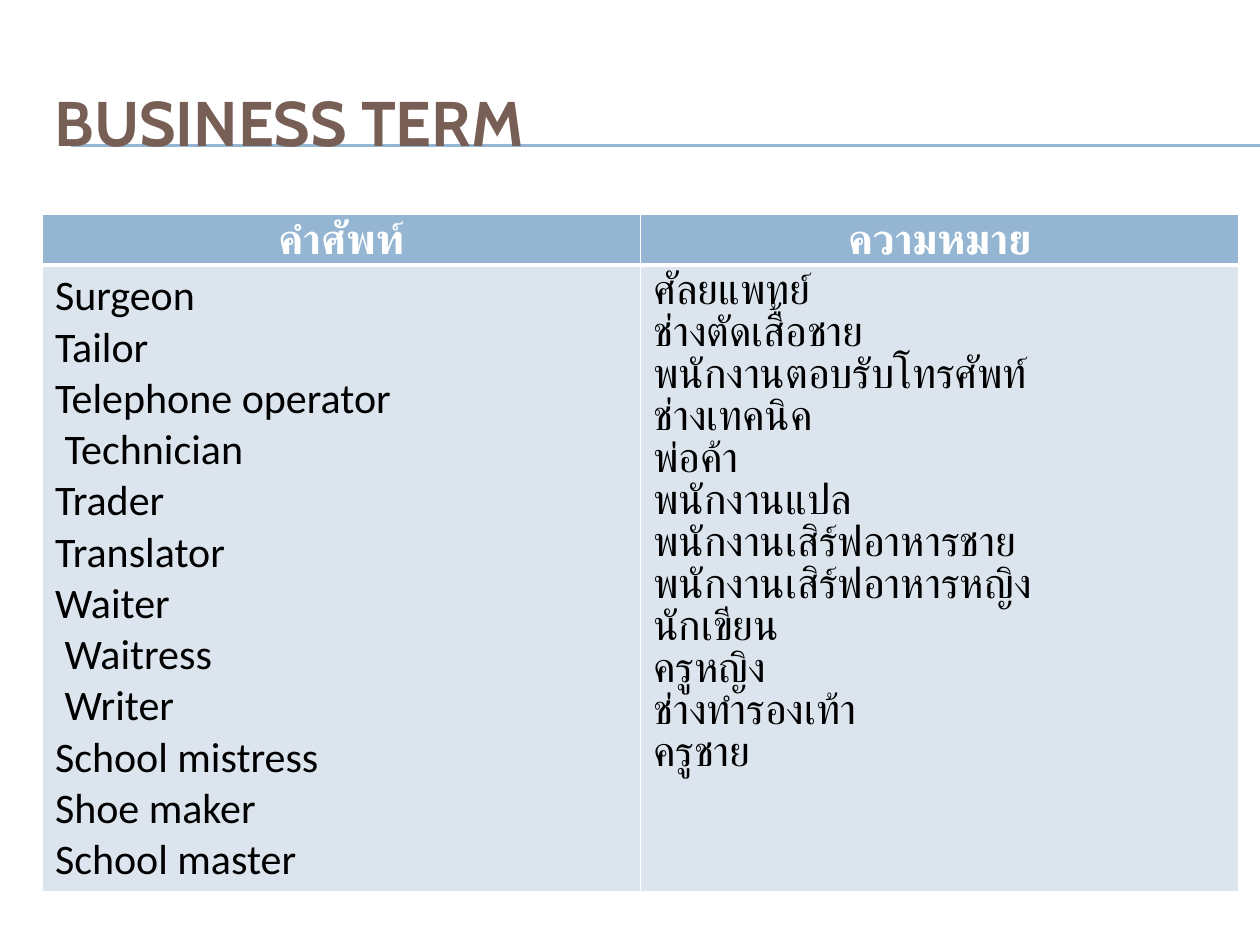
from dataclasses import dataclass

from lxml import etree
from pptx import Presentation
from pptx.dml.color import RGBColor
from pptx.enum.shapes import MSO_CONNECTOR
from pptx.enum.text import MSO_ANCHOR, PP_ALIGN
from pptx.oxml.ns import qn
from pptx.util import Pt

STRAIGHT = MSO_CONNECTOR.STRAIGHT
MIDDLE, TOP = MSO_ANCHOR.MIDDLE, MSO_ANCHOR.TOP
LEFT, CENTER = PP_ALIGN.LEFT, PP_ALIGN.CENTER
EMU_PER_PX = 914400 / 126
BLUE, PALE, BROWN, WHITE, BLACK = "94B6D2", "DCE5EE", "775F55", "FFFFFF", "000000"

TERMS = [
    ("Surgeon", "ศัลยแพทย์"),
    ("Tailor", "ช่างตัดเสื้อชาย"),
    ("Telephone operator", "พนักงานตอบรับโทรศัพท์"),
    (" Technician", "ช่างเทคนิค"),
    ("Trader", "พ่อค้า"),
    ("Translator", "พนักงานแปล"),
    ("Waiter", "พนักงานเสิร์ฟอาหารชาย"),
    (" Waitress", "พนักงานเสิร์ฟอาหารหญิง"),
    (" Writer", "นักเขียน"),
    ("School mistress", "ครูหญิง"),
    ("Shoe maker", "ช่างทำรองเท้า"),
    ("School master", "ครูชาย"),
]


@dataclass
class CellStyle:
    fill: str
    color: str
    bold: bool
    align: PP_ALIGN
    margin_x: int
    margin_y: int
    bottom_border: int


HEADER = CellStyle(BLUE, WHITE, True, CENTER, 9, 0, 3)
BODY = CellStyle(PALE, BLACK, False, LEFT, 13, 6, 1)


def px(n: int) -> int:
    return round(n * EMU_PER_PX)


def rgb(color: str) -> RGBColor:
    return RGBColor.from_string(color)


def format_run(r, color: str, **values) -> None:
    for name, value in values.items():
        setattr(r.font, name, value)
    r.font.color.rgb = rgb(color)


def add_rule(s, y: int) -> None:
    line = s.shapes.add_connector(STRAIGHT, px(71), px(y), px(1260), px(y))
    line.line.color.rgb = rgb(BLUE)
    line.line.width = Pt(0.75)
    etree.SubElement(line._element.spPr, qn("a:effectLst"))


def set_borders(cell, bottom: int) -> None:
    tcPr = cell._tc.get_or_add_tcPr()
    widths = {"a:lnL": 1, "a:lnR": 1, "a:lnT": 1, "a:lnB": bottom}
    for i, (tag, width) in enumerate(widths.items()):
        ln = etree.Element(qn(tag), w=str(Pt(width)))
        fill = etree.SubElement(ln, qn("a:solidFill"))
        etree.SubElement(fill, qn("a:srgbClr"), val=WHITE)
        tcPr.insert(i, ln)


def fill_cell(cell, lines: list[str], style: CellStyle, spacing=None) -> None:
    cell.fill.solid()
    cell.fill.fore_color.rgb = rgb(style.fill)
    cell.margin_left = cell.margin_right = px(style.margin_x)
    cell.margin_top = cell.margin_bottom = px(style.margin_y)
    cell.vertical_anchor = TOP
    set_borders(cell, style.bottom_border)
    tf = cell.text_frame
    for i, text in enumerate(lines):
        p = tf.add_paragraph() if i else tf.paragraphs[0]
        p.alignment = style.align
        p.line_spacing = spacing
        r = p.add_run()
        r.text = text
        format_run(r, style.color, name="Calibri", size=Pt(24), bold=style.bold)


def main() -> None:
    prs = Presentation()
    prs.slide_width, prs.slide_height = px(1260), px(945)
    s = prs.slides.add_slide(prs.slide_layouts[5])

    # Double rule behind the title
    for y in (145, 146):
        add_rule(s, y)

    # Title, raised above the rule
    title = s.shapes.title
    box = {"left": 42, "top": 63, "width": 1197, "height": 116}
    for name, value in box.items():
        setattr(title, name, px(value))
    s.shapes._spTree.append(title._element)
    tf = title.text_frame
    tf.vertical_anchor = MIDDLE
    p = tf.paragraphs[0]
    p.alignment = LEFT
    r = p.add_run()
    r.text = "BUSINESS TERM"
    format_run(r, BROWN, name="Cabin", size=Pt(36), bold=True)

    # Vocabulary table: one header row, one row listing all terms
    table = s.shapes.add_table(2, 2, px(42), px(214), px(1197), px(677)).table
    table.horz_banding = False
    for row, height in zip(table.rows, (51, 626)):
        row.height = px(height)
    words, meanings = zip(*TERMS)
    for col, heading in enumerate(("คำศัพท์", "ความหมาย")):
        fill_cell(table.cell(0, col), [heading], HEADER, Pt(28))
    fill_cell(table.cell(1, 0), words, BODY)
    fill_cell(table.cell(1, 1), meanings, BODY, Pt(24))

    prs.save("out.pptx")


if __name__ == "__main__":
    main()
